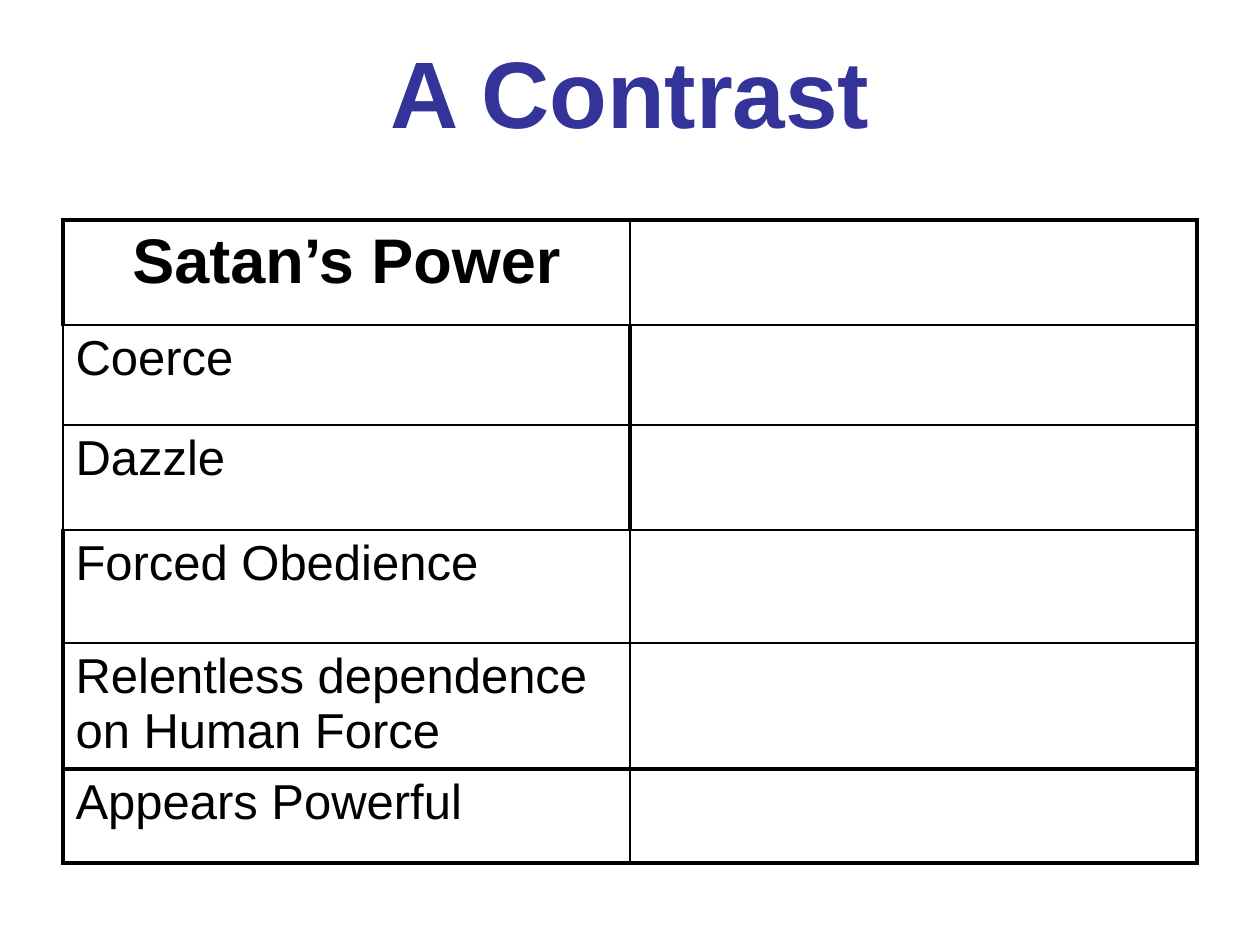
from dataclasses import dataclass

import pptx
import pptx.dml.color
import pptx.enum.text
import pptx.oxml
import pptx.oxml.ns
import pptx.util

PP_ALIGN = pptx.enum.text.PP_ALIGN
EMU_PER_PX = 914400 / 126


@dataclass(frozen=True)
class Theme:
    font: str = "Arial"
    ink: str = "000000"
    title: str = "333399"
    title_pt: int = 54
    head_pt: int = 36
    body_pt: int = 28
    thin_pt: float = 1
    thick_pt: float = 2.25


@dataclass(frozen=True)
class Row:
    """One table row; `heavy` names its thick edges: l(eft), m(iddle), t(op), b(ottom)."""
    text: str
    height: int
    heavy: str


THEME = Theme()
ROWS = [
    Row("Satan’s Power", 105, "lt"),
    Row("Coerce", 100, "m"),
    Row("Dazzle", 105, "m"),
    Row("Forced Obedience", 113, "l"),
    Row("Relentless dependence on Human Force", 126, "lb"),
    Row("Appears Powerful", 94, "ltb"),
]


def px(n: int) -> pptx.util.Emu:
    return pptx.util.Emu(round(n * EMU_PER_PX))


def style_text(p, size: int, color: str, bold: bool, align) -> None:
    p.alignment = align
    for r in p.runs:
        r.font.name = THEME.font
        r.font.size = pptx.util.Pt(size)
        r.font.bold = bold
        r.font.color.rgb = pptx.dml.color.RGBColor.from_string(color)


def set_borders(cell, thick: dict[str, bool]) -> None:
    """Draw the L, R, T and B edges, which must come before the cell's fill."""
    tc_pr = cell._tc.get_or_add_tcPr()
    for i, (side, is_thick) in enumerate(thick.items()):
        width = pptx.util.Pt(THEME.thick_pt if is_thick else THEME.thin_pt)
        tc_pr.insert(i, pptx.oxml.parse_xml(
            f'<a:ln{side} {pptx.oxml.ns.nsdecls("a")} w="{width}"><a:solidFill>'
            f'<a:srgbClr val="{THEME.ink}"/></a:solidFill></a:ln{side}>'))


def add_title(s, text: str) -> None:
    sp = s.shapes.title
    sp.left, sp.top, sp.width, sp.height = px(63), px(0), px(1134), px(168)
    tf = sp.text_frame
    tf.text = text
    tf.vertical_anchor = pptx.enum.text.MSO_ANCHOR.MIDDLE
    tf.margin_top, tf.margin_bottom = px(20), px(6)
    style_text(tf.paragraphs[0], THEME.title_pt, THEME.title, True, PP_ALIGN.CENTER)


def add_contrast_table(s, rows: list[Row]) -> None:
    height = sum(row.height for row in rows)
    table = s.shapes.add_table(len(rows), 2, px(63), px(220), px(1134), px(height)).table
    table.first_row = table.horz_banding = False
    for i, row in enumerate(rows):
        table.rows[i].height = px(row.height)
        left, right = table.cell(i, 0), table.cell(i, 1)
        left.text_frame.text = row.text
        p = left.text_frame.paragraphs[0]
        if i == 0:
            style_text(p, THEME.head_pt, THEME.ink, True, PP_ALIGN.CENTER)
        else:
            style_text(p, THEME.body_pt, THEME.ink, False, PP_ALIGN.LEFT)
        l, m, t, b = (edge in row.heavy for edge in "lmtb")
        for cell, edges in ((left, (l, m)), (right, (m, True))):
            cell.fill.background()
            set_borders(cell, dict(zip("LRTB", (*edges, t, b))))


def main() -> None:
    prs = pptx.Presentation()
    prs.slide_width, prs.slide_height = px(1260), px(945)
    s = prs.slides.add_slide(prs.slide_layouts[5])
    add_title(s, "A Contrast")
    add_contrast_table(s, ROWS)
    prs.save("out.pptx")


if __name__ == "__main__":
    main()
